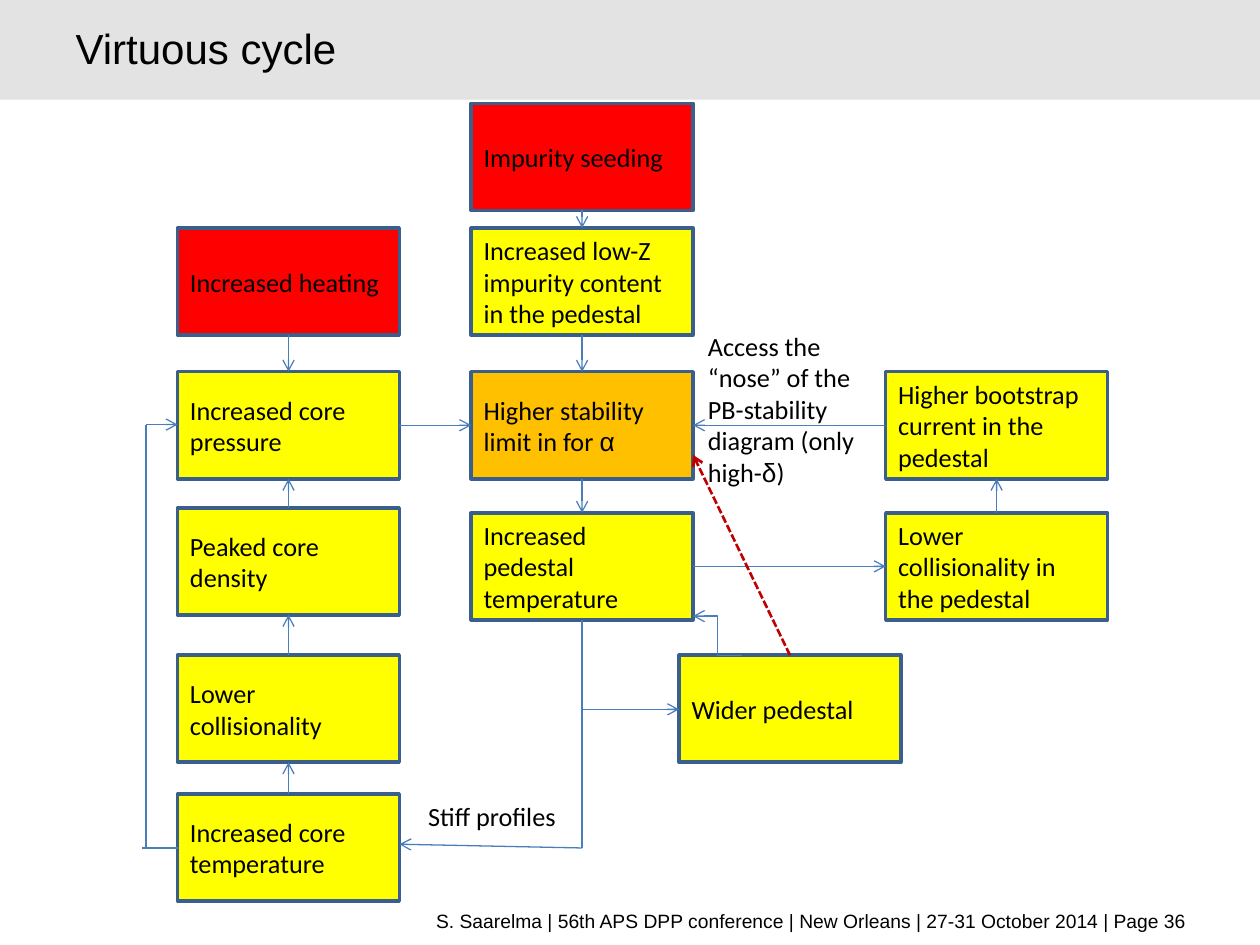
from itertools import groupby

from lxml.etree import SubElement
from pptx import Presentation
from pptx.dml.color import RGBColor
from pptx.enum.dml import MSO_LINE
from pptx.enum.shapes import MSO_CONNECTOR, MSO_SHAPE
from pptx.enum.text import MSO_ANCHOR, MSO_AUTO_SIZE, PP_ALIGN
from pptx.oxml.ns import qn
from pptx.util import Inches, Pt

COLORS = {"band": "E3E3E3", "black": "000000", "yellow": "FFFF00",
          "orange": "FFC000", "red": "FF0000", "edge": "3A5F8C",
          "link": "4A7EBB", "dash": "C00000"}

# Box grid: column lefts and one common size
LEFT, MID, RIGHT = 1.41, 3.74, 7.03
WIDE, HIGH = 1.76, 0.85

# Connection sites of a rectangle
TOP, WEST, BASE, EAST = range(4)

# Name: text, left, top, fill
BOXES = {
    "seed": ("Impurity seeding", MID, 0.82, "red"),
    "low_z": ("Increased low-Z impurity content in the pedestal",
              MID, 1.81, "yellow"),
    "limit": ("Higher stability limit in for α", MID, 2.95, "orange"),
    "ped": ("Increased pedestal temperature", MID, 4.07, "yellow"),
    "heat": ("Increased heating", LEFT, 1.81, "red"),
    "press": ("Increased core pressure", LEFT, 2.95, "yellow"),
    "peak": ("Peaked core density", LEFT, 4.03, "yellow"),
    "lower": ("Lower collisionality", LEFT, 5.2, "yellow"),
    "core": ("Increased core temperature", LEFT, 6.3, "yellow"),
    "boot": ("Higher bootstrap current in the pedestal",
             RIGHT, 2.95, "yellow"),
    "coll": ("Lower collisionality in the pedestal", RIGHT, 4.07, "yellow"),
    "wide": ("Wider pedestal", 5.39, 5.2, "yellow"),
}

# Arrows that join two boxes: from, site, to, site
LINKS = [
    ("seed", BASE, "low_z", TOP), ("low_z", BASE, "limit", TOP),
    ("limit", BASE, "ped", TOP), ("heat", BASE, "press", TOP),
    ("core", TOP, "lower", BASE), ("lower", TOP, "peak", BASE),
    ("peak", TOP, "press", BASE), ("press", EAST, "limit", WEST),
    ("ped", EAST, "coll", WEST), ("coll", TOP, "boot", BASE),
    ("boot", WEST, "limit", EAST),
]

# Plain segments of the outer loops: start, end, arrow at the end
PATHS = [
    ((4.62, 4.92), (4.62, 6.73), False),
    ((4.62, 6.73), (3.17, 6.7), True),
    ((1.41, 6.73), (1.13, 6.73), False),
    ((1.16, 6.73), (1.16, 3.37), False),
    ((1.16, 3.37), (1.41, 3.37), True),
]


def paint(name):
    return RGBColor.from_string(COLORS[name])


def put(item, values):
    for key, value in values.items():
        setattr(item, key, value)


def write(frame, text, size=15, face="Calibri", align=PP_ALIGN.LEFT, **form):
    """Fill a text frame; Greek letters are set in Arial."""
    put(frame, {"word_wrap": True, "vertical_anchor": MSO_ANCHOR.MIDDLE,
                **form})
    para = frame.paragraphs[0]
    para.alignment = align
    for greek, part in groupby(text, lambda sign: sign in "αδ"):
        run = para.add_run()
        run.text = "".join(part)
        put(run.font, {"size": Pt(size), "name": "Arial" if greek else face})
        run.font.color.rgb = paint("black")


def add_rect(slide, left, top, width, height, fill):
    rect = slide.shapes.add_shape(
        MSO_SHAPE.RECTANGLE, *map(Inches, (left, top, width, height)))
    rect.shadow.inherit = False
    rect.fill.solid()
    rect.fill.fore_color.rgb = paint(fill)
    return rect


def add_box(slide, text, left, top, fill):
    box = add_rect(slide, left, top, WIDE, HIGH, fill)
    box.line.color.rgb = paint("edge")
    box.line.width = Pt(2)
    write(box.text_frame, text)
    return box


def add_label(slide, text, left, top, width, height, **form):
    box = slide.shapes.add_textbox(*map(Inches, (left, top, width, height)))
    write(box.text_frame, text, **form)


def add_line(slide, start=(0, 0), end=(0, 0), arrow=True,
             kind=MSO_CONNECTOR.STRAIGHT, color="link", width=0.75, dash=None):
    line = slide.shapes.add_connector(kind, *map(Inches, (*start, *end)))
    line.line.color.rgb = paint(color)
    put(line.line, {"width": Pt(width), "dash_style": dash})
    props = line._element.spPr
    if arrow:
        SubElement(props.find(qn("a:ln")), qn("a:tailEnd"), type="arrow")
    SubElement(props, qn("a:effectLst"))
    return line


def add_link(slide, first, out, last, into):
    link = add_line(slide)
    link.begin_connect(first, out)
    link.end_connect(last, into)


def add_corner(slide, start, end):
    """Elbow with one bend: down from the start, then right to the end."""
    (x1, y1), (x2, y2) = start, end
    # The frame is turned a quarter, so its sides swap about the centre
    mid_x, mid_y = (x1 + x2) / 2, (y1 + y2) / 2
    half_w, half_h = (y2 - y1) / 2, (x2 - x1) / 2
    line = add_line(slide, (mid_x - half_w, mid_y - half_h),
                    (mid_x + half_w, mid_y + half_h),
                    kind=MSO_CONNECTOR.ELBOW)
    props = line._element.spPr
    props.find(qn("a:prstGeom")).set("prst", "bentConnector2")
    frame = props.find(qn("a:xfrm"))
    frame.set("rot", "16200000")
    frame.set("flipH", "1")


def add_title(slide, text):
    title = slide.shapes.title
    put(title, {"left": Inches(0.5), "top": Inches(-0.11),
                "width": Inches(4.74), "height": Inches(0.97)})
    write(title.text_frame, text, size=24, face="Arial")


def main():
    deck = Presentation()
    put(deck, {"slide_width": Inches(10), "slide_height": Inches(7.5)})
    slide = deck.slides.add_slide(deck.slide_layouts[5])

    # Header band, placed behind the title
    band = add_rect(slide, 0, 0, 10, 0.79, "band")
    band.line.fill.background()
    slide.shapes.title._element.addprevious(band._element)
    add_title(slide, "Virtuous cycle")

    # Boxes and the arrows between them
    boxes = {name: add_box(slide, *data) for name, data in BOXES.items()}
    for first, out, last, into in LINKS:
        add_link(slide, boxes[first], out, boxes[last], into)

    # Outer loops and the links of the wider pedestal
    for start, end, arrow in PATHS:
        add_line(slide, start, end, arrow)
    add_corner(slide, (4.62, 4.92), (5.39, 5.63))
    add_line(slide, (5.89, 5.2), (5.5, 4.89), kind=MSO_CONNECTOR.ELBOW)
    add_line(slide, (6.27, 5.2), (5.5, 3.61), color="dash", width=1.5,
             dash=MSO_LINE.SQUARE_DOT)

    # Notes beside the arrows, and the footer
    note = {"vertical_anchor": MSO_ANCHOR.TOP,
            "auto_size": MSO_AUTO_SIZE.SHAPE_TO_FIT_TEXT}
    add_label(slide, "Stiff profiles", 3.3, 6.3, 1.24, 0.35,
              **{**note, "word_wrap": False})
    add_label(slide, "Access the “nose” of the PB-stability diagram "
              "(only high-δ)", 5.52, 2.57, 1.51, 1.38, **note)
    add_label(slide, "S. Saarelma | 56th APS DPP conference | New Orleans | "
              "27-31 October 2014 | Page 36", 0.51, 7.16, 9.01, 0.29,
              size=11, face="Arial", align=PP_ALIGN.RIGHT)

    deck.save("out.pptx")


if __name__ == "__main__":
    main()
